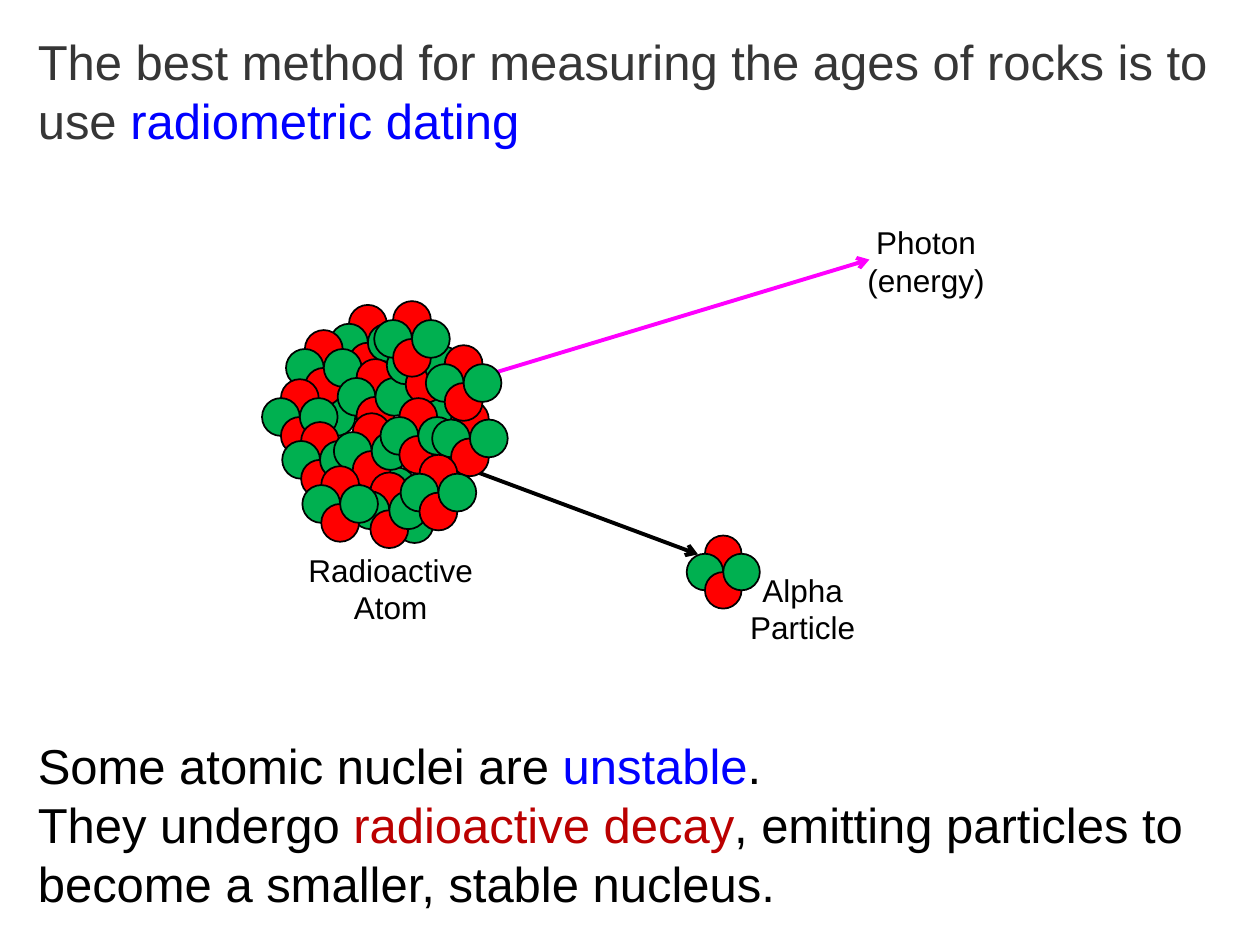
"""Builds a slide on radiometric dating with a decaying atom."""
from dataclasses import dataclass

from pptx import Presentation
from pptx.dml.color import RGBColor
from pptx.enum.shapes import MSO_CONNECTOR as Connector, MSO_SHAPE as Shape
from pptx.enum.text import MSO_ANCHOR as Anchor, MSO_AUTO_SIZE as AutoSize, PP_ALIGN as Align
from pptx.oxml.ns import qn
from pptx.util import Inches, Pt
from lxml.etree import SubElement


@dataclass(frozen=True)
class Theme:
    """Colours, type and line sizes of the slide."""
    font: str = "Arial"
    text_size: int = 28
    label_size: int = 18
    outline: float = 1
    arrow: float = 2.25
    heading: str = "363636"
    ink: str = "000000"
    term: str = "0000FF"
    decay: str = "BB0000"
    proton: str = "FF0000"
    neutron: str = "00B050"
    photon: str = "FF00FF"


@dataclass(frozen=True)
class Box:
    """A region of the grid, in columns and rows."""
    left: float
    top: float
    width: float
    height: float

    def inner(self, column, row, width, height):
        """Return a box placed relative to this one."""
        return Box(self.left + column, self.top + row, width, height)

    def frame(self):
        """Return the box as left, top, width and height on the slide."""
        return [grid(n) for n in (self.left, self.top, self.width, self.height)]


THEME = Theme()
COLUMNS, ROWS = 100, 75
CELL = 0.1

NUCLEUS_LOOSE = [(9.2, 13.2), (10.6, 16.2), (4.4, 7.7), (12.5, 7)]
NUCLEUS_CLUSTERS = [
    (5.4, 0.3), (1.9, 2.3), (0, 6.2), (6, 4.6), (1.6, 9.6), (9.9, 2.1), (5.7, 8.9),
    (9.4, 7.7), (7.1, 13.6), (13.5, 7.9), (3.2, 13.1), (13, 3.5), (8.9, 0), (11, 12.2),
]


def grid(cells):
    """Turn a number of grid cells into a length."""
    return Inches(cells * CELL)


def colour(value):
    """Turn a hexadecimal string into a colour."""
    return RGBColor.from_string(value)


def write(frame, paragraphs, size=THEME.text_size, align=Align.LEFT, wrap=True):
    """Fill a text frame with paragraphs of (text, colour) pieces."""
    frame.word_wrap = wrap
    frame.auto_size = AutoSize.SHAPE_TO_FIT_TEXT
    frame.vertical_anchor = Anchor.TOP
    for index, pieces in enumerate(paragraphs):
        para = frame.add_paragraph() if index else frame.paragraphs[0]
        para.alignment = align
        para.space_before = Pt(0)
        for text, tint in pieces:
            for number, part in enumerate(text.split("\n")):
                if number:
                    para.add_line_break()
                span = para.add_run()
                span.text = part
                span.font.name = THEME.font
                span.font.size = Pt(size)
                span.font.color.rgb = colour(tint)


def place(shape, box):
    """Move a placeholder into a box."""
    shape.left, shape.top, shape.width, shape.height = box.frame()


def heading(page, box):
    """Fill the title placeholder."""
    title = page.shapes.title
    place(title, box)
    write(title.text_frame, [[
        ("The best method for measuring the ages of rocks is to use ", THEME.heading),
        ("radiometric dating", THEME.term),
    ]])


def statement(page, box):
    """Fill the body placeholder with unbulleted text."""
    body = page.placeholders[1]
    place(body, box)
    write(body.text_frame, [[
        ("Some atomic nuclei are ", THEME.ink),
        ("unstable", THEME.term),
        (".\nThey undergo ", THEME.ink),
        ("radioactive decay", THEME.decay),
        (", emitting particles to become a smaller, stable nucleus.", THEME.ink),
    ]])
    for para in body.text_frame.paragraphs:
        layout = para._p.get_or_add_pPr()
        layout.set("marL", "0")
        layout.set("indent", "0")
        SubElement(layout, qn("a:buNone"))


def label(page, box, *lines):
    """Add a centred label, one paragraph a line."""
    text_box = page.shapes.add_textbox(*box.frame())
    write(text_box.text_frame, [[(line, THEME.ink)] for line in lines],
          size=THEME.label_size, align=Align.CENTER, wrap=False)


def arrow(page, box, start, end, tint):
    """Draw an arrow between two points of a box."""
    ends = [grid(n) for x, y in (start, end) for n in (box.left + x, box.top + y)]
    line = page.shapes.add_connector(Connector.STRAIGHT, *ends)
    line.line.color.rgb = colour(tint)
    line.line.width = Pt(THEME.arrow)
    SubElement(line.line._get_or_add_ln(), qn("a:tailEnd"), type="arrow")
    SubElement(line._element.spPr, qn("a:effectLst"))


def particle(shapes, box, tint):
    """Draw one proton or neutron."""
    ball = shapes.add_shape(Shape.OVAL, *box.frame())
    ball.shadow.inherit = False
    ball.fill.solid()
    ball.fill.fore_color.rgb = colour(tint)
    ball.line.color.rgb = colour(THEME.ink)
    ball.line.width = Pt(THEME.outline)


def cluster(shapes, box):
    """Draw two protons and two neutrons as a diamond filling a box."""
    size, step = box.width / 2, box.width / 4
    for column, row, tint in ((1, 0, THEME.proton), (0, 1, THEME.neutron),
                              (1, 2, THEME.proton), (2, 1, THEME.neutron)):
        particle(shapes, box.inner(column * step, row * step, size, size), tint)


def nucleus(page, box):
    """Draw the large nucleus from loose neutrons and clusters."""
    shapes = page.shapes.add_group_shape().shapes
    for column, row in NUCLEUS_LOOSE:
        particle(shapes, box.inner(column, row, 3, 3), THEME.neutron)
    for column, row in NUCLEUS_CLUSTERS:
        cluster(shapes, box.inner(column, row, 6, 6))


def decay_figure(page, box):
    """Draw the atom, what it emits and their labels."""
    arrow(page, box, (13.1, 18.7), (35.4, 27), THEME.ink)
    cluster(page.shapes.add_group_shape().shapes, box.inner(34.5, 25.5, 5.8, 5.8))
    label(page, box.inner(3.4, 26.2, 15.2, 7.1), "Radioactive\nAtom")
    arrow(page, box, (12.9, 14.5), (49, 3.6), THEME.photon)
    nucleus(page, box.inner(0.8, 6.9, 19.5, 19.6))
    label(page, box.inner(38.5, 27.8, 10.4, 7.1), "Alpha", "Particle")
    label(page, box.inner(47.8, 0.2, 11.4, 7.1), "Photon", "(energy)")


def main():
    """Build and save the deck."""
    deck = Presentation()
    deck.slide_width, deck.slide_height = grid(COLUMNS), grid(ROWS)
    page = deck.slides.add_slide(deck.slide_layouts[1])
    heading(page, Box(2, 2, 96.2, 10.4))
    statement(page, Box(2, 57.9, 95.1, 15.1))
    decay_figure(page, Box(20, 17, 60, 35))
    deck.save("out.pptx")


if __name__ == "__main__":
    main()
